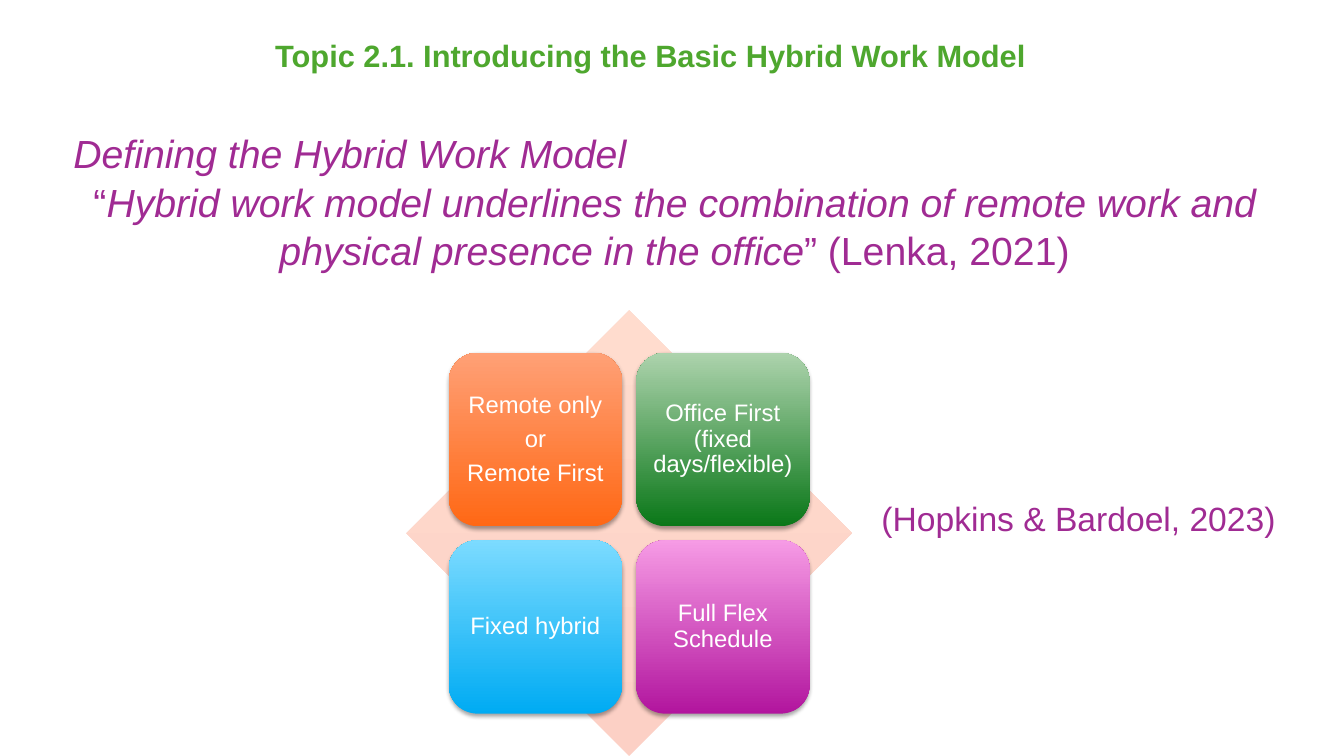
from lxml import etree
from pptx import Presentation
from pptx.dml.color import RGBColor
from pptx.enum.shapes import MSO_SHAPE
from pptx.enum.text import MSO_ANCHOR, PP_ALIGN
from pptx.oxml.ns import qn
from pptx.util import Inches, Pt

LEFT, CENTER, RIGHT = PP_ALIGN.LEFT, PP_ALIGN.CENTER, PP_ALIGN.RIGHT
TOP, MIDDLE = MSO_ANCHOR.TOP, MSO_ANCHOR.MIDDLE
DIAMOND, ROUNDED = MSO_SHAPE.DIAMOND, MSO_SHAPE.ROUNDED_RECTANGLE

COLORS = {
    "title": "4EA72E", "text": "A02B93", "white": "FFFFFF", "shadow": "000000",
    "diamond": ("FCD0C5", "FFDCCE"),
    "orange": ("FF6815", "FFA076"),
    "green": ("0A7718", "ADD3AD"),
    "blue": ("00ABF3", "7CDBFF"),
    "magenta": ("B2159E", "F69BE5"),
}


class HybridSlide:
    font = "Arial"

    def __init__(self, deck):
        self.page = deck.slides.add_slide(deck.slide_layouts[5])

    def format_span(self, span, size, color, bold=False, italic=False):
        span.font.name = self.font
        span.font.size = Pt(size)
        span.font.bold = bold
        span.font.italic = italic
        span.font.color.rgb = RGBColor.from_string(COLORS[color])

    def prepare_frame(self, frame, anchor, side=0.1, end=0.05):
        frame.word_wrap = True
        frame.vertical_anchor = anchor
        frame.margin_left = frame.margin_right = Inches(side)
        frame.margin_top = frame.margin_bottom = Inches(end)

    def title(self, text, left, top, width, height):
        box = self.page.shapes.title
        box.left, box.top = Inches(left), Inches(top)
        box.width, box.height = Inches(width), Inches(height)
        self.prepare_frame(box.text_frame, MIDDLE)
        box.text_frame.text = text
        para = box.text_frame.paragraphs[0]
        para.alignment = LEFT
        self.format_span(para.runs[0], 22, "title", bold=True)

    def text(self, paras, left, top, width, height, size):
        """Each paragraph is (alignment, line spacing, [(words, italic), ...])."""
        box = self.page.shapes.add_textbox(
            Inches(left), Inches(top), Inches(width), Inches(height))
        frame = box.text_frame
        self.prepare_frame(frame, TOP)
        for index, (alignment, spacing, pieces) in enumerate(paras):
            para = frame.paragraphs[0] if index == 0 else frame.add_paragraph()
            para.alignment = alignment
            para.line_spacing = spacing
            for words, italic in pieces:
                span = para.add_run()
                span.text = words
                self.format_span(span, size, "text", italic=italic)

    def gradient_shape(self, kind, left, top, side, colors):
        shape = self.page.shapes.add_shape(
            kind, Inches(left), Inches(top), Inches(side), Inches(side))
        shape.fill.gradient()
        shape.fill.gradient_angle = 90
        for stop, color in zip(shape.fill.gradient_stops, COLORS[colors]):
            stop.color.rgb = RGBColor.from_string(color)
        shape.line.fill.background()
        shape.shadow.inherit = False
        return shape

    def add_shadow(self, shape):
        effects = shape.element.spPr.find(qn("a:effectLst"))
        shadow = etree.SubElement(
            effects, qn("a:outerShdw"), blurRad=str(Pt(3.1)), dist=str(Pt(1.8)),
            dir="5400000", rotWithShape="0")
        color = etree.SubElement(shadow, qn("a:srgbClr"), val=COLORS["shadow"])
        etree.SubElement(color, qn("a:alpha"), val="35000")

    def tile(self, lines, left, top, side, colors):
        shape = self.gradient_shape(ROUNDED, left, top, side, colors)
        shape.adjustments[0] = 0.167
        self.add_shadow(shape)
        self.prepare_frame(shape.text_frame, MIDDLE, 0.07, 0.07)
        shape.text_frame.text = "\n".join(lines)
        for index, para in enumerate(shape.text_frame.paragraphs):
            para.alignment = CENTER
            para.line_spacing = 0.9
            para.space_before = Pt(6 if index else 0)
            self.format_span(para.runs[0], 17, "white")


def main():
    deck = Presentation()
    deck.slide_width, deck.slide_height = Inches(13.33), Inches(7.5)
    slide = HybridSlide(deck)

    # Title and definition
    slide.title("Topic 2.1. Introducing the Basic Hybrid Work Model",
                2.63, 0.3, 8.5, 0.5)
    slide.text([
        (LEFT, 1.0, [("Defining the Hybrid Work Model", True)]),
        (CENTER, 1.04, [
            ("“", False),
            ("Hybrid work model underlines the combination of remote work "
             "and physical presence in the office", True),
            ("” (Lenka, 2021)", False)]),
    ], 0.63, 1.23, 12.12, 1.5, 28)

    # Citation beside the diagram
    slide.text([(RIGHT, 1.0, [("(Hopkins & Bardoel, 2023)", False)])],
               8.45, 4.89, 4.3, 0.5, 24)

    # Diamond with a two by two grid of work models
    slide.gradient_shape(DIAMOND, 4.03, 3.08, 4.42, "diamond")
    models = [
        (["Remote only", "or", "Remote First"], "orange"),
        (["Office First (fixed days/flexible)"], "green"),
        (["Fixed hybrid"], "blue"),
        (["Full Flex Schedule"], "magenta"),
    ]
    pitch = 1.86
    for index, (lines, colors) in enumerate(models):
        row, column = divmod(index, 2)
        slide.tile(lines, 4.45 + column * pitch, 3.5 + row * pitch, 1.72, colors)

    deck.save("out.pptx")


if __name__ == "__main__":
    main()
